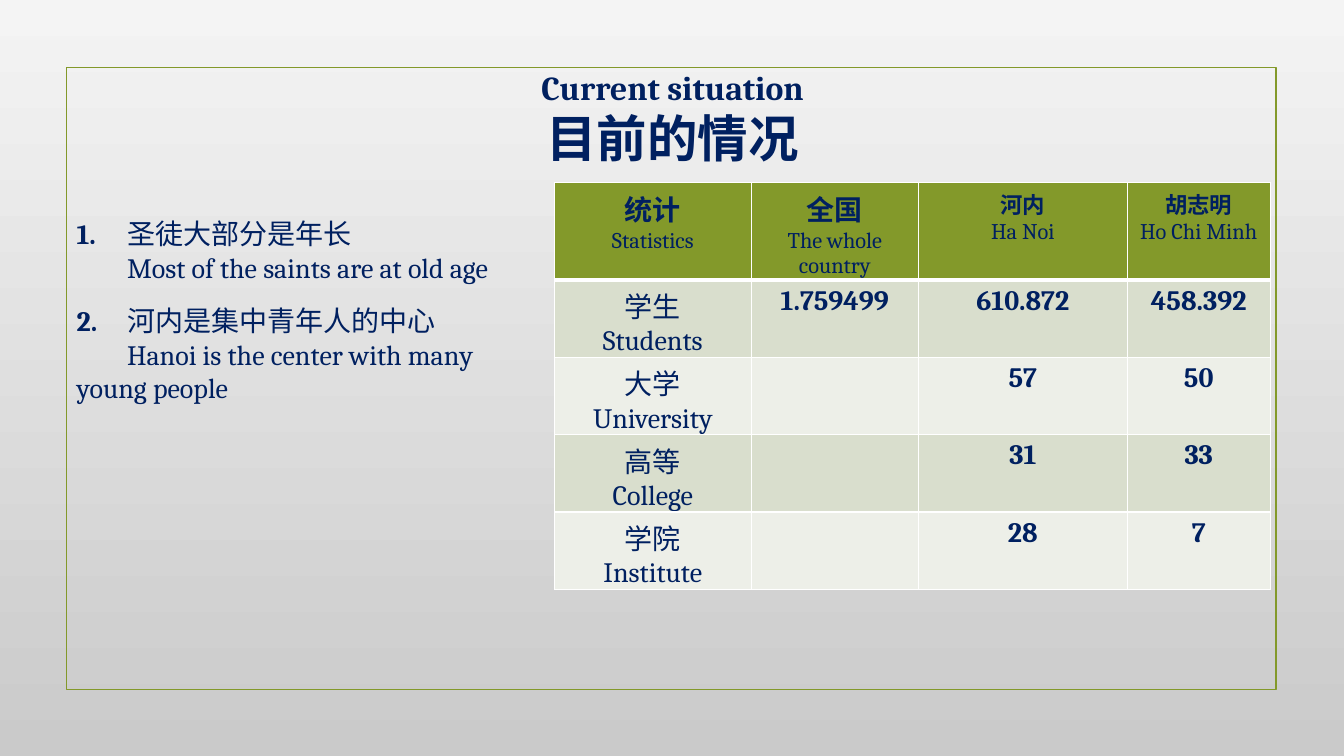
"""Build the slide on the current situation of students in Vietnam."""
from lxml import etree
from pptx import Presentation
from pptx import util as u
from pptx.dml.color import RGBColor
from pptx.enum import shapes, text
from pptx.oxml import ns

FONT, NAVY, GREEN, WHITE = "Cambria", "002060", "83992A", "FFFFFF"
BANDS = ["D9DECD", "EDEFE8"]
BACKGROUND = ["F4F4F4", "CACACA"]
TITLE = [("Current situation", 24), ("目前的情况", 36)]
NOTES = [
    ("1.", "圣徒大部分是年长", "Most of the saints are at old age", (0.66, 2.1, 4.84, 0.77)),
    ("2.", "河内是集中青年人的中心", "Hanoi is the center with many\vyoung people",
     (0.66, 2.96, 4.74, 1.45)),
]
HEADINGS = [("统计", "Statistics", 20), ("全国", "The whole country", 20),
            ("河内", "Ha Noi", 16), ("胡志明", "Ho Chi Minh", 16)]
ROWS = [
    (("学生", "Students"), "1.759499", "610.872", "458.392"),
    (("大学", "University"), "", "57", "50"),
    (("高等", "College"), "", "31", "33"),
    (("学院", "Institute"), "", "28", "7"),
]
FRAME_AREA = (0.66, 0.67, 12, 6.17)
TITLE_AREA = (0.66, 0.61, 12.02, 1.11)
TABLE_AREA = (5.5, 1.81, 7.1, 2.89)
COLUMN_WIDTHS = [1.95, 1.66, 2.07, 1.42]
ROW_HEIGHTS = [0.69] + [0.55] * len(ROWS)


def color(value):
    """Turn a hex string into a colour."""
    return RGBColor.from_string(value)


def inches(area):
    """Turn a tuple of inches into lengths."""
    return [u.Inches(length) for length in area]


def place(shape, area):
    """Move and size a shape."""
    shape.left, shape.top, shape.width, shape.height = inches(area)


def style(font, size, bold):
    """Set the common look of text."""
    font.name, font.size, font.bold = FONT, u.Pt(size), bold
    font.color.rgb = color(NAVY)


def write_lines(frame, lines):
    """Write centred lines given as (wording, size, bold)."""
    for index, (wording, size, bold) in enumerate(lines):
        para = frame.add_paragraph() if index else frame.paragraphs[0]
        para.text = wording
        para.alignment = text.PP_ALIGN.CENTER
        style(para.font, size, bold)


def format_note(para):
    """Remove the bullet and set a half-inch tab stop."""
    para.space_before = u.Pt(0)
    props = para._p.get_or_add_pPr()
    props.set("marL", "0")
    props.set("indent", "0")
    etree.SubElement(props, ns.qn("a:buNone"))
    tabs = etree.SubElement(props, ns.qn("a:tabLst"))
    etree.SubElement(tabs, ns.qn("a:tab"), pos=str(u.Inches(0.5)), algn="l")


def write_note(box, number, chinese, english):
    """Write a numbered note in two languages."""
    frame = box.text_frame
    frame.auto_size = text.MSO_AUTO_SIZE.SHAPE_TO_FIT_TEXT
    first, second = frame.paragraphs[0], frame.add_paragraph()
    format_note(first)
    format_note(second)
    for wording, bold in ((number + "\t", True), (chinese, False)):
        span = first.add_run()
        span.text = wording
        style(span.font, 20, bold)
    second.text = "\t" + english
    style(second.font, 20, False)


def paint_cell(cell, fill, bottom=1):
    """Give a cell white borders and a fill."""
    props = cell._tc.get_or_add_tcPr()
    for side, width in (("L", 1), ("R", 1), ("T", 1), ("B", bottom)):
        line = etree.SubElement(props, ns.qn("a:ln" + side), w=str(u.Pt(width)))
        solid = etree.SubElement(line, ns.qn("a:solidFill"))
        etree.SubElement(solid, ns.qn("a:srgbClr"), val=WHITE)
    cell.fill.solid()
    cell.fill.fore_color.rgb = color(fill)


def add_statistics(page):
    """Add the table of statistics."""
    table = page.shapes.add_table(len(ROW_HEIGHTS), len(COLUMN_WIDTHS), *inches(TABLE_AREA)).table
    for column, width in zip(table.columns, COLUMN_WIDTHS):
        column.width = u.Inches(width)
    for row, height in zip(table.rows, ROW_HEIGHTS):
        row.height = u.Inches(height)
    for index, (chinese, english, size) in enumerate(HEADINGS):
        cell = table.cell(0, index)
        write_lines(cell.text_frame, [(chinese, size, True), (english, 16, False)])
        paint_cell(cell, GREEN, bottom=3)
    for number, (label, *values) in enumerate(ROWS, 1):
        contents = [[(line, 20, False) for line in label]]
        contents += [[(value, 20, True)] if value else [] for value in values]
        for index, lines in enumerate(contents):
            cell = table.cell(number, index)
            write_lines(cell.text_frame, lines)
            paint_cell(cell, BANDS[(number - 1) % 2])


def main():
    """Build and save the deck."""
    deck = Presentation()
    deck.slide_width, deck.slide_height = inches((13.33, 7.5))
    page = deck.slides.add_slide(deck.slide_layouts[3])

    fill = page.background.fill
    fill.gradient()
    fill.gradient_angle = 270
    for stop, value in zip(fill.gradient_stops, BACKGROUND):
        stop.color.rgb = color(value)

    frame = page.shapes.add_shape(shapes.MSO_SHAPE.RECTANGLE, *inches(FRAME_AREA))
    frame.shadow.inherit = False
    frame.fill.background()
    frame.line.color.rgb = color(GREEN)
    frame.line.width = u.Pt(1.25)

    title, *boxes = list(page.placeholders)[:3]
    place(title, TITLE_AREA)
    title.text_frame.vertical_anchor = text.MSO_ANCHOR.TOP
    title.text_frame.auto_size = text.MSO_AUTO_SIZE.SHAPE_TO_FIT_TEXT
    write_lines(title.text_frame, [(wording, size, True) for wording, size in TITLE])
    for box, (number, chinese, english, area) in zip(boxes, NOTES):
        place(box, area)
        write_note(box, number, chinese, english)

    add_statistics(page)
    deck.save("out.pptx")


if __name__ == "__main__":
    main()
